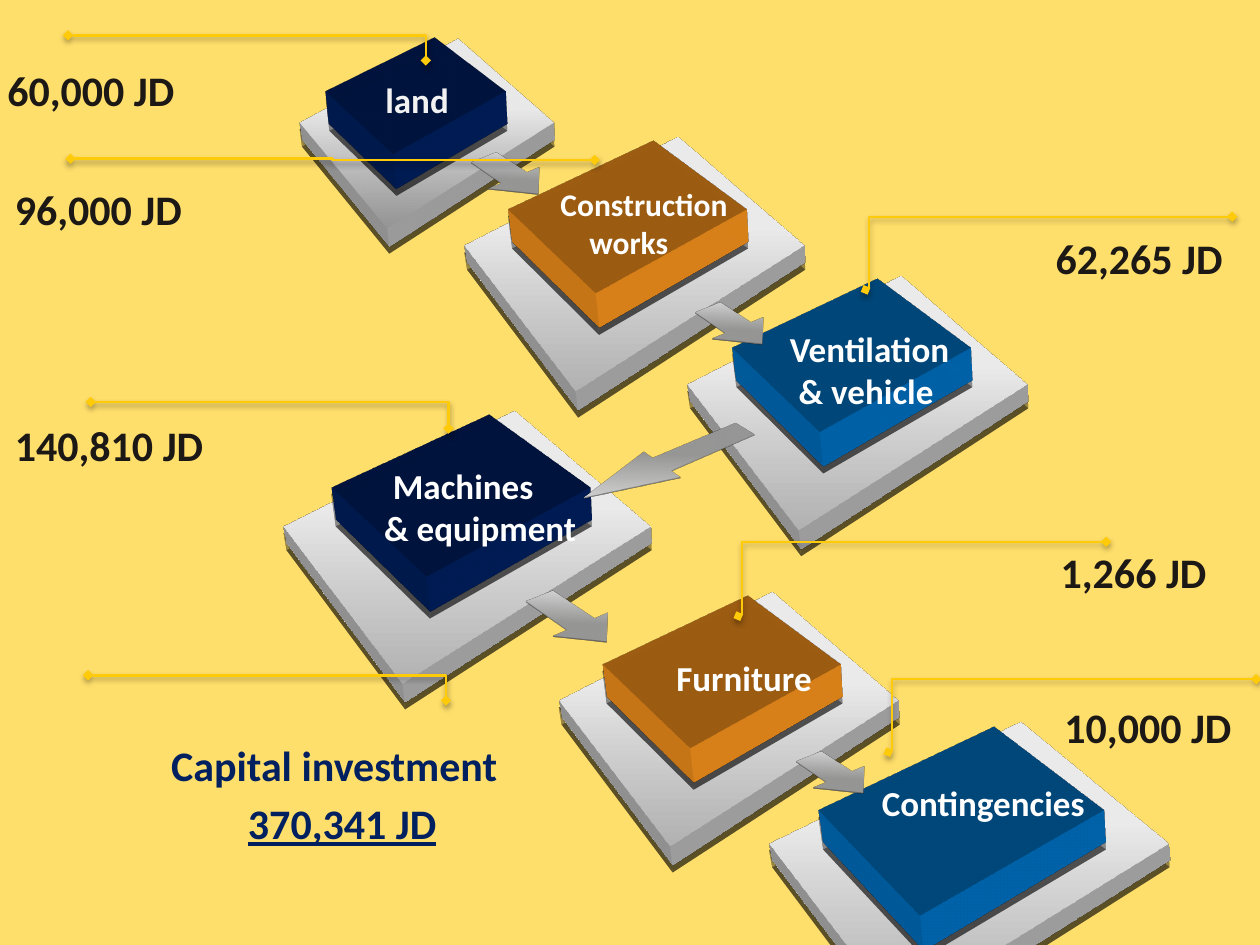
from dataclasses import dataclass

from lxml import etree
from pptx import Presentation
from pptx.dml.color import RGBColor
from pptx.enum import shapes, text
from pptx.oxml import ns
from pptx.util import Inches, Pt

Point = tuple[float, float]
Box = tuple[float, float, float, float]


@dataclass(frozen=True)
class Theme:
    background: str = "FFDF6B"
    navy: str = "002060"
    orange: str = "F8931D"
    blue: str = "0070C0"
    ink: str = "1C1815"
    white: str = "FFFFFF"
    off_white: str = "F2F2F2"
    line: str = "FFCA08"
    base_light: str = "EAEAEA"
    base_mid: str = "B2B2B2"
    base_dark: str = "969696"
    arrow_light: str = "DDDDDD"
    font: str = "Calibri"
    amount: int = 24
    label: int = 20
    small_label: int = 18


@dataclass(frozen=True)
class Depth:
    height: float
    color: str
    tilt: int = 290
    turn: int = 0
    camera: str = "legacyPerspectiveTopRight"


@dataclass(frozen=True)
class Step:
    base: Box
    block: Box
    color: str
    base_edge: str = "B2B2B2"


@dataclass(frozen=True)
class Arrow:
    box: Box
    rotation: float = 47.3
    head: float = 0.68


@dataclass(frozen=True)
class Callout:
    start: Point
    end: Point
    bend: float = 1.0
    width: float = 1.5


@dataclass(frozen=True)
class Label:
    box: Box
    lines: tuple[str, ...]
    size: int
    color: str
    indents: Point = (0, 0)
    wrap: bool = False
    underline: bool = False


T = Theme()

STEPS = [
    Step((2.28, 2.5, 2.88, 3.34), (2.64, 2.76, 2.04, 2.21), T.navy),
    Step((3.71, 0.36, 2.67, 3.17), (4.04, 0.61, 1.88, 2.1), T.orange),
    Step((5.48, 1.46, 2.67, 3.17), (5.82, 1.71, 1.88, 2.1), T.blue),
    Step((6.14, 4.93, 3.13, 3.51), (6.51, 5.18, 2.25, 2.5), T.blue),
    Step((2.39, -0.28, 2, 2.5), (2.59, -0.11, 1.42, 1.67), T.navy, T.base_dark),
    Step((4.46, 3.97, 2.67, 3.17), (4.79, 4.22, 1.88, 2.1), T.orange),
]

ARROWS = [
    Arrow((3.67, 1.15, 0.76, 0.48)),
    Arrow((5.45, 2.34, 0.76, 0.48)),
    Arrow((4.56, 3.4, 1.49, 0.52), 136.3, 1.32),
    Arrow((4.07, 4.65, 0.94, 0.51)),
    Arrow((6.25, 5.9, 0.76, 0.48)),
]

CALLOUTS = [
    Callout((0.54, 0.28), (3.38, 0.48)),
    Callout((0.56, 1.26), (4.72, 1.27), bend=0.5),
    Callout((0.72, 3.19), (3.56, 3.4)),
    Callout((0.7, 5.36), (3.54, 5.56)),
    Callout((9.78, 1.72), (6.87, 2.3), 0.99, 1),
    Callout((8.78, 4.3), (5.86, 4.89), 0.99, 1),
    Callout((9.97, 5.39), (7.05, 5.97), 0.99, 1),
]

LABELS = [
    Label((2.96, 0.57, 0.75, 0.44), ("land",), T.label, T.off_white),
    Label((4.35, 1.42, 1.54, 0.71), ("Construction", "works"), T.small_label, T.white, (0, 0.23)),
    Label((6.17, 2.55, 1.67, 0.77), ("Ventilation", "& vehicle"), T.label, T.white, (0, 0.07)),
    Label((2.89, 3.64, 1.8, 0.77), ("Machines", "& equipment"), T.label, T.white, (0.13, 0.06)),
    Label((5.27, 5.16, 1.34, 0.44), ("Furniture",), T.label, T.white),
    Label((6.9, 6.15, 1.83, 0.44), ("Contingencies",), T.label, T.white),
    Label((1.26, 5.82, 3.24, 0.5), ("Capital investment",), T.amount, T.navy, wrap=True),
    Label((1.87, 6.28, 2.53, 0.5), ("370,341 JD",), T.amount, T.navy, wrap=True, underline=True),
]

AMOUNTS = [
    (-0.04, 0.46, "60,000 JD"), (0.02, 1.41, "96,000 JD"), (8.28, 1.8, "62,265 JD"),
    (0.02, 3.28, "140,810 JD"), (8.32, 4.29, "1,266 JD"), (8.35, 5.52, "10,000 JD"),
]


def child(parent, tag: str, **attributes):
    return etree.SubElement(parent, ns.qn(tag), {k: str(v) for k, v in attributes.items()})


def add_shadow(properties, blur: float, distance: float, opacity: int) -> None:
    for old in properties.findall(ns.qn("a:effectLst")):
        properties.remove(old)
    shadow = child(child(properties, "a:effectLst"), "a:outerShdw", blurRad=Pt(blur),
                   dist=Pt(distance), dir=5400000, rotWithShape=0)
    child(child(shadow, "a:srgbClr", val="000000"), "a:alpha", val=opacity * 1000)


def add_depth(properties, depth: Depth) -> None:
    scene = child(properties, "a:scene3d")
    camera = child(scene, "a:camera", prst=depth.camera)
    child(camera, "a:rot", lat=depth.tilt * 60000, lon=depth.turn * 60000, rev=0)
    child(scene, "a:lightRig", rig="legacyFlat3", dir="b")
    solid = child(properties, "a:sp3d", extrusionH=Inches(depth.height), prstMaterial="legacyMatte")
    child(child(solid, "a:extrusionClr"), "a:srgbClr", val=depth.color)


def add_solid(parent, kind, box: Box, colors: tuple[str, ...], angle: int = 270):
    sp = parent.add_shape(kind, *(Inches(v) for v in box))
    sp.shadow.inherit = False
    sp.line.fill.background()
    if len(colors) == 1:
        sp.fill.solid()
        sp.fill.fore_color.rgb = RGBColor.from_string(colors[0])
        return sp
    sp.fill.gradient()
    sp.fill.gradient_angle = angle
    for stop, color, position in zip(sp.fill.gradient_stops, colors, (0.42, 1)):
        stop.color.rgb = RGBColor.from_string(color)
        stop.position = position
    return sp


def add_step(slide, step: Step) -> None:
    group = slide.shapes.add_group_shape().shapes
    layers = ((step.base, (T.base_light, step.base_edge), Depth(0.16, T.base_mid)),
              (step.block, (step.color,), Depth(0.3, step.color)))
    for box, colors, depth in layers:
        sp = add_solid(group, shapes.MSO_SHAPE.DIAMOND, box, colors)
        add_shadow(sp._element.spPr, 4, 4, 40)
        add_depth(sp._element.spPr, depth)


def add_arrow(slide, arrow: Arrow) -> None:
    sp = add_solid(slide.shapes, shapes.MSO_SHAPE.RIGHT_ARROW, arrow.box,
                   (T.base_dark, T.arrow_light), 180)
    sp.adjustments[0], sp.adjustments[1] = 0.5, arrow.head
    sp.rotation = arrow.rotation
    add_depth(sp._element.spPr, Depth(0.01, T.base_dark))


def add_callout(slide, callout: Callout) -> None:
    c = slide.shapes.add_connector(shapes.MSO_CONNECTOR.ELBOW,
                                   *(Inches(v) for v in callout.start + callout.end))
    c.line.color.rgb = RGBColor.from_string(T.line)
    c.line.width = Pt(callout.width)
    properties = c._element.spPr
    guides = properties.find(ns.qn("a:prstGeom")).get_or_add_avLst()
    child(guides, "a:gd", name="adj1", fmla=f"val {round(callout.bend * 100000)}")
    for end in ("a:headEnd", "a:tailEnd"):
        child(properties.find(ns.qn("a:ln")), end, type="diamond")
    add_shadow(properties, 3.1, 1.8, 35)


def add_label(slide, label: Label) -> None:
    sp = slide.shapes.add_textbox(*(Inches(v) for v in label.box))
    tf = sp.text_frame
    tf.word_wrap = label.wrap
    tf.auto_size = text.MSO_AUTO_SIZE.SHAPE_TO_FIT_TEXT
    tf.text = "\n".join(label.lines)
    for p, indent in zip(tf.paragraphs, label.indents):
        p.alignment = text.PP_ALIGN.LEFT
        p._p.get_or_add_pPr().set("marL", str(Inches(indent)))
        for r in p.runs:
            r.font.name = T.font
            r.font.size = Pt(label.size)
            r.font.bold = True
            r.font.underline = label.underline or None
            r.font.color.rgb = RGBColor.from_string(label.color)


def main() -> None:
    prs = Presentation()
    prs.slide_width, prs.slide_height = Inches(10), Inches(7.5)
    slide = prs.slides.add_slide(prs.slide_layouts[6])
    slide.background.fill.solid()
    slide.background.fill.fore_color.rgb = RGBColor.from_string(T.background)
    amounts = [Label((x, y, 2.53, 0.5), (value,), T.amount, T.ink, wrap=True)
               for x, y, value in AMOUNTS]
    for draw, items in ((add_step, STEPS), (add_arrow, ARROWS),
                        (add_callout, CALLOUTS), (add_label, LABELS + amounts)):
        for item in items:
            draw(slide, item)
    prs.save("out.pptx")


if __name__ == "__main__":
    main()
